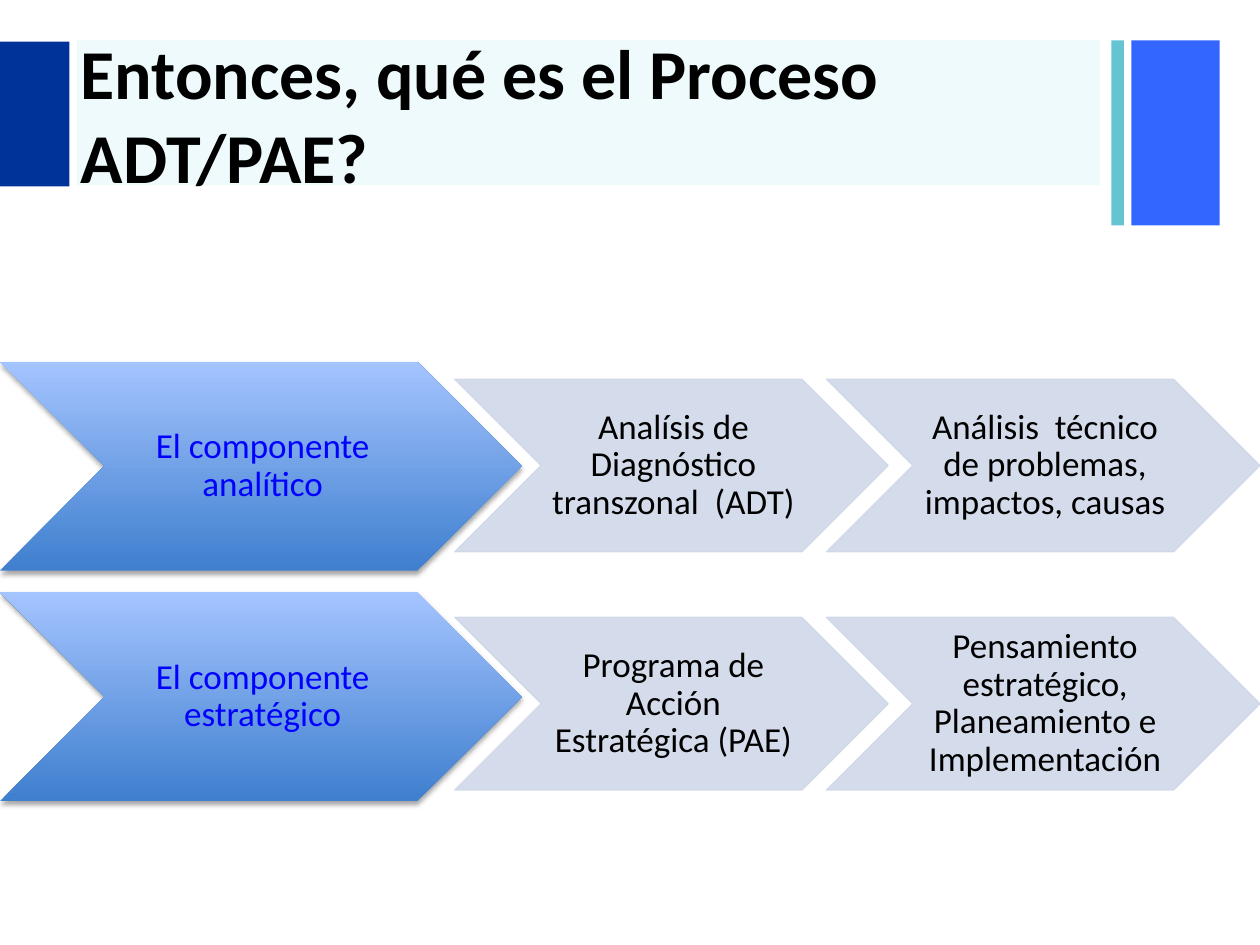
from pptx import Presentation
from pptx.dml.color import RGBColor as RGB
from pptx.enum.shapes import MSO_SHAPE as Kind
from pptx.enum.text import MSO_ANCHOR as Anchor, MSO_AUTO_SIZE as Auto, PP_ALIGN as Align
from pptx.oxml import parse_xml
from pptx.oxml.ns import nsdecls, qn
from pptx.util import Inches, Pt

NAVY = RGB(0x00, 0x33, 0x99)
BLUE = RGB(0x33, 0x66, 0xFF)
TEAL = RGB(0x65, 0xC4, 0xD2)
AQUA = RGB(0x14, 0xC5, 0xD0)
PALE = RGB(0xD0, 0xD8, 0xE8)
DARK = RGB(0x3F, 0x7F, 0xCE)
LIGHT = RGB(0xA4, 0xC4, 0xFF)
INK = RGB(0x00, 0x00, 0xFF)
BLACK = RGB(0x00, 0x00, 0x00)

SHADOW = (f'<a:effectLst {nsdecls("a")}><a:outerShdw blurRad="{Pt(3.1)}" dist="{Pt(1.8)}" '
          'dir="5400000" rotWithShape="0"><a:srgbClr val="000000">'
          '<a:alpha val="35000"/></a:srgbClr></a:outerShdw></a:effectLst>')


def write(frame, text, size=20, color=BLACK, bold=False, align=Align.CENTER,
          space=None, font="Calibri"):
    """Fill a text frame with one formatted paragraph."""
    frame.word_wrap = True
    frame.auto_size = Auto.NONE
    frame.vertical_anchor = Anchor.MIDDLE
    para = frame.paragraphs[0]
    para.alignment, para.line_spacing = align, space
    run = para.add_run()
    run.text = text
    run.font.name, run.font.size = font, Pt(size)
    run.font.bold, run.font.color.rgb = bold, color


def fade(fill, alpha):
    """Make a solid fill see-through, alpha in percent."""
    color = fill._xPr.find(qn("a:solidFill"))[0]
    color.append(parse_xml(f'<a:alpha {nsdecls("a")} val="{alpha * 1000}"/>'))


class Deck:
    def __init__(self, wide, high):
        self.prs = Presentation()
        self.prs.slide_width, self.prs.slide_height = Inches(wide), Inches(high)
        self.slide = self.prs.slides.add_slide(self.prs.slide_layouts[5])

    def shape(self, kind, *box):
        item = self.slide.shapes.add_shape(kind, *map(Inches, box))
        item.shadow.inherit = False
        item.line.fill.background()
        return item

    def bar(self, *box, color, alpha=100):
        fill = self.shape(Kind.RECTANGLE, *box).fill
        fill.solid()
        fill.fore_color.rgb = color
        if alpha < 100:
            fade(fill, alpha)

    def title(self, text, *box):
        item = self.slide.shapes.title
        item.left, item.top, item.width, item.height = map(Inches, box)
        write(item.text_frame, text, size=40, bold=True, align=Align.LEFT)
        self.slide.shapes._spTree.append(item._element)  # bring to front

    def arrow(self, text, *box, color=BLACK):
        item = self.shape(Kind.CHEVRON, *box)
        frame = item.text_frame
        frame.margin_left, frame.margin_right = Inches(0.03), 0
        frame.margin_top = frame.margin_bottom = Inches(0.01)
        write(frame, text, color=color, space=0.9)
        return item

    def head(self, text, *box):
        item = self.arrow(text, *box, color=INK)
        item.fill.gradient()
        item.fill.gradient_angle = 90
        for stop, color in zip(item.fill.gradient_stops, (DARK, LIGHT)):
            stop.color.rgb = color
        props = item._element.spPr
        props.replace(props.find(qn("a:effectLst")), parse_xml(SHADOW))

    def step(self, text, *box):
        item = self.arrow(text, *box)
        item.line.width = Pt(0.75)
        for fill in (item.fill, item.line.fill):
            fill.solid()
            fill.fore_color.rgb = PALE
            fade(fill, 90)


def main():
    deck = Deck(10, 7.5)

    # Header bars and title
    deck.bar(8.98, 0.32, 0.7, 1.47, color=BLUE)
    deck.bar(8.82, 0.32, 0.1, 1.47, color=TEAL)
    deck.bar(0.61, 0.32, 8.12, 1.15, color=AQUA, alpha=7)
    deck.bar(0, 0.33, 0.55, 1.15, color=NAVY)
    deck.title("Entonces, qué es el Proceso ADT/PAE?", 0.54, 0.34, 8.27, 1.12)

    # Component rows: head top, step top, head text, step texts
    rows = [
        (2.87, 3.01, "El componente analítico",
         ["Analísis de Diagnóstico transzonal  (ADT)",
          "Análisis  técnico de problemas, impactos, causas"]),
        (4.7, 4.9, "El componente estratégico",
         ["Programa de Acción Estratégica (PAE)",
          "Pensamiento estratégico, Planeamiento e Implementación"]),
    ]
    for top, low, name, steps in rows:
        deck.head(name, 0, top, 4.14, 1.66)
        for i, text in enumerate(steps):
            deck.step(text, 3.61 + 2.95 * i, low, 3.44, 1.37)

    deck.prs.save("out.pptx")


if __name__ == "__main__":
    main()
